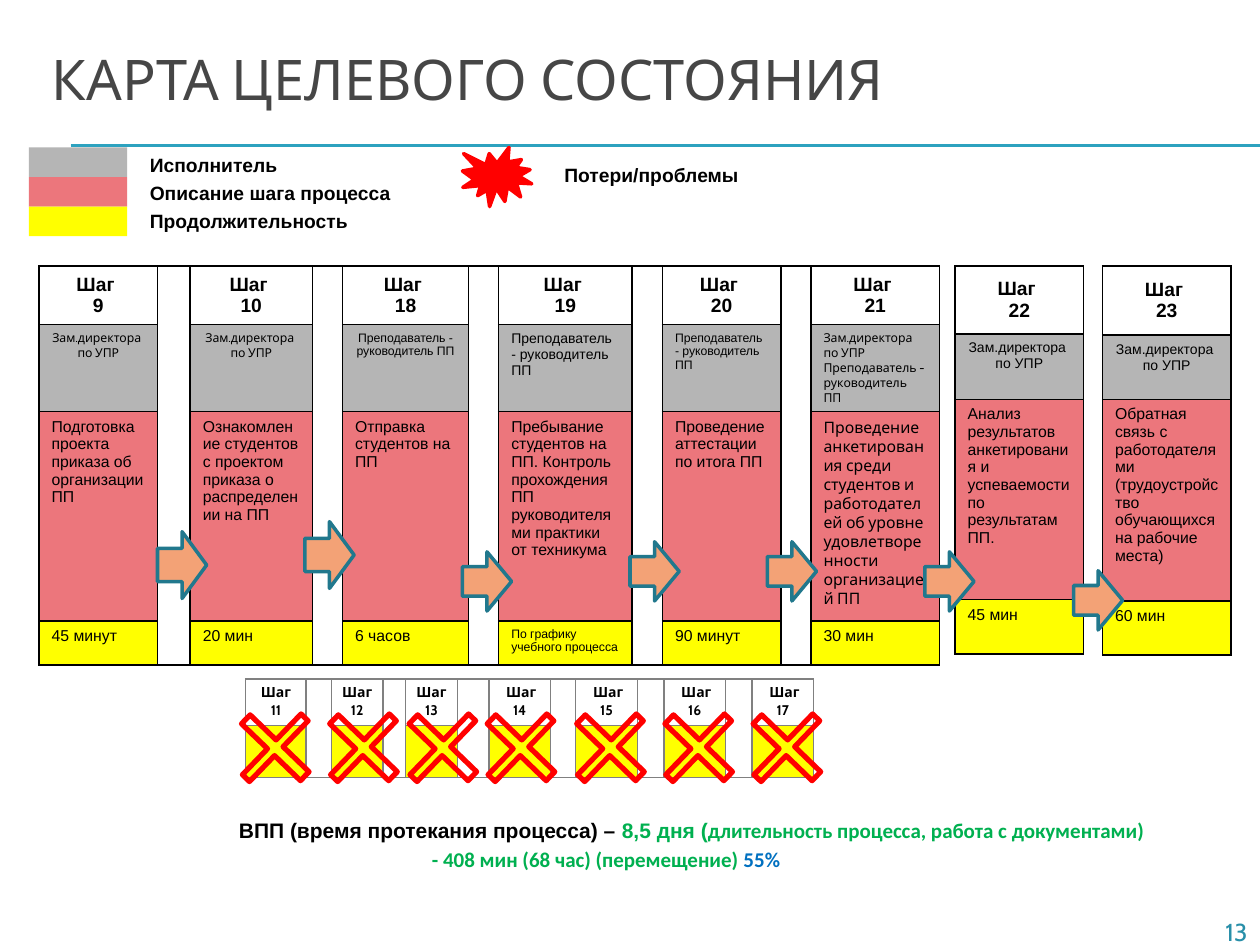
from dataclasses import dataclass

from lxml import etree
from pptx import Presentation
from pptx.dml.color import RGBColor
from pptx.enum.shapes import MSO_CONNECTOR, MSO_SHAPE
from pptx.enum.text import MSO_ANCHOR, PP_ALIGN
from pptx.oxml.ns import qn
from pptx.util import Inches, Pt

LEFT, CENTER, RIGHT = PP_ALIGN.LEFT, PP_ALIGN.CENTER, PP_ALIGN.RIGHT
TOP, MIDDLE = MSO_ANCHOR.TOP, MSO_ANCHOR.MIDDLE
RECTANGLE, ARROW = MSO_SHAPE.RECTANGLE, MSO_SHAPE.RIGHT_ARROW
BURST, CROSS = MSO_SHAPE.EXPLOSION1, MSO_SHAPE.CROSS
STRAIGHT = MSO_CONNECTOR.STRAIGHT


@dataclass(frozen=True)
class Theme:
    sans: str = "Arial"
    display: str = "Cabin"
    summary: str = "Calibri"
    black: str = "000000"
    white: str = "FFFFFF"
    title: str = "464646"
    number: str = "288FA9"
    rule: str = "2DA2BF"
    performer: str = "B5B5B5"
    action: str = "EC767C"
    duration: str = "FFFF00"
    loss: str = "FF0000"
    arrow: str = "F3A276"
    arrow_line: str = "21788D"
    removed_line: str = "808080"
    good: str = "00B050"
    share: str = "0070C0"
    title_size: float = 32
    number_size: float = 14
    summary_size: float = 12
    heading_size: float = 11
    body_size: float = 9
    note_size: float = 8
    small_size: float = 7


THEME = Theme()
STEP_FILLS = [THEME.white, THEME.performer, THEME.action, THEME.duration]


@dataclass(frozen=True)
class Entry:
    """Text of one table cell."""
    lines: tuple = ()
    size: float = THEME.body_size
    font: str = THEME.sans
    align: PP_ALIGN = LEFT
    bold: bool = False
    anchor: MSO_ANCHOR = TOP


@dataclass(frozen=True)
class Grid:
    """Place and measures of a table; odd columns are gaps when there are several."""
    left: float
    top: float
    columns: list
    rows: list
    fills: list
    line: str = THEME.black
    inset: tuple = (0.1, 0.05)


def rgb(value: str) -> RGBColor:
    return RGBColor.from_string(value)


def add_span(para, text: str, size: float, color: str, font: str = THEME.sans, bold: bool = False) -> None:
    span = para.add_run()
    span.text = text
    span.font.size, span.font.name, span.font.bold = Pt(size), font, bold
    span.font.color.rgb = rgb(color)


def add_paragraph(frame, first: bool):
    return frame.paragraphs[0] if first else frame.add_paragraph()


def add_text(page, left: float, top: float, width: float, height: float):
    box = page.shapes.add_textbox(Inches(left), Inches(top), Inches(width), Inches(height))
    box.text_frame.word_wrap = True
    return box.text_frame


def add_figure(page, kind, left: float, top: float, width: float, height: float,
               fill: str = "", line: str = "", weight: float = 2):
    figure = page.shapes.add_shape(kind, Inches(left), Inches(top), Inches(width), Inches(height))
    figure.shadow.inherit = False
    if fill:
        figure.fill.solid()
        figure.fill.fore_color.rgb = rgb(fill)
    else:
        figure.fill.background()
    if line:
        figure.line.color.rgb = rgb(line)
        figure.line.width = Pt(weight)
    else:
        figure.line.fill.background()
    return figure


def style_cell(cell, fill: str, line: str) -> None:
    properties = cell._tc.get_or_add_tcPr()
    for side in ("lnL", "lnR", "lnT", "lnB"):
        border = etree.SubElement(properties, qn(f"a:{side}"), w=str(Pt(1)))
        solid = etree.SubElement(border, qn("a:solidFill"))
        etree.SubElement(solid, qn("a:srgbClr"), val=line)
    cell.fill.solid()
    cell.fill.fore_color.rgb = rgb(fill)


def fill_cell(cell, entry: Entry) -> None:
    cell.vertical_anchor = entry.anchor
    for index, line in enumerate(entry.lines):
        para = add_paragraph(cell.text_frame, index == 0)
        para.alignment = entry.align
        add_span(para, line, entry.size, THEME.black, entry.font, entry.bold)
    if not entry.lines:
        # Small end mark keeps empty cells from stretching their row
        mark = etree.SubElement(cell.text_frame.paragraphs[0]._p, qn("a:endParaRPr"))
        mark.set("sz", str(int(THEME.small_size * 100)))


def draw_table(page, grid: Grid, steps: list) -> None:
    frame = page.shapes.add_table(
        len(grid.rows), len(grid.columns), Inches(grid.left), Inches(grid.top),
        Inches(sum(grid.columns)), Inches(sum(grid.rows)))
    table = frame.table
    table.first_row = table.horz_banding = False
    for column, width in zip(table.columns, grid.columns):
        column.width = Inches(width)
    for row, height in zip(table.rows, grid.rows):
        row.height = Inches(height)
    for x in range(len(grid.columns)):
        gap = x % 2 == 1
        if gap:
            table.cell(0, x).merge(table.cell(len(grid.rows) - 1, x))
        for y, fill in enumerate(grid.fills):
            cell = table.cell(y, x)
            cell.margin_left = cell.margin_right = Inches(grid.inset[0])
            cell.margin_top = cell.margin_bottom = Inches(grid.inset[1])
            style_cell(cell, THEME.white if gap else fill, grid.line)
            fill_cell(cell, Entry() if gap else steps[x // 2][y])


def make_step(number: int, performer: Entry, action: tuple, duration: str,
              action_font: str = THEME.sans, duration_size: float = THEME.body_size) -> list:
    heading = Entry(("Шаг ", str(number)), THEME.heading_size, align=CENTER, bold=True, anchor=MIDDLE)
    return [heading, performer, Entry(action, font=action_font), Entry((duration,), duration_size)]


DEPUTY = ("Зам.директора ", "по УПР")
TEACHER = ("Преподаватель - руководитель ПП",)
DEPUTY_SMALL = Entry(DEPUTY, THEME.small_size, THEME.display, CENTER)
DEPUTY_NOTE = Entry(DEPUTY, THEME.note_size, align=CENTER)
MAIN_STEPS = [
    make_step(9, DEPUTY_SMALL, ("Подготовка проекта приказа об организации ПП",), "45 минут"),
    make_step(10, DEPUTY_SMALL, ("Ознакомление студентов с проектом приказа о распределении на ПП",), "20 мин"),
    make_step(18, Entry(TEACHER, THEME.small_size, align=CENTER), ("Отправка студентов на ПП",), "6 часов"),
    make_step(19, Entry(TEACHER, THEME.note_size),
              ("Пребывание студентов на ПП. Контроль прохождения ПП руководителями практики от техникума",),
              "По графику учебного процесса", duration_size=THEME.small_size),
    make_step(20, Entry(TEACHER, THEME.small_size), ("Проведение аттестации по итога ПП",), "90 минут"),
    make_step(21, Entry(("Зам.директора", "по УПР") + TEACHER, THEME.small_size, THEME.display),
              ("Проведение анкетирования среди студентов и работодателей об уровне "
               "удовлетворенности организацией ПП",), "30 мин", THEME.display),
]
STEP_22 = make_step(22, DEPUTY_NOTE, ("Анализ результатов анкетирования и успеваемости по результатам ПП.",), "45 мин")
STEP_23 = make_step(23, DEPUTY_NOTE, ("Обратная связь с работодателями",
                                      "(трудоустройство обучающихся на рабочие места)"), "60 мин")
REMOVED_STEPS = [
    [Entry((label,), THEME.note_size, THEME.display, CENTER, True), Entry()]
    for label in ("Шаг 11", "Шаг 12", "Шаг 13", " Шаг 14", " Шаг 15", " Шаг 16", " Шаг 17")
]
ARROWS = [(1.25, 4.22, 0.53), (2.42, 4.14, 0.53), (3.67, 4.38, 0.47), (5, 4.3, 0.47),
          (6.09, 4.3, 0.47), (7.34, 4.38, 0.47), (8.52, 4.53, 0.47)]
CROSS_LEFTS = [1.86, 2.56, 3.19, 3.81, 4.52, 5.22, 5.92]


def draw_header(page) -> None:
    for y in (1.15, 1.16):
        rule = page.shapes.add_connector(STRAIGHT, Inches(0.56), Inches(y), Inches(10), Inches(y))
        rule.line.color.rgb, rule.line.width = rgb(THEME.rule), Pt(0.75)
        etree.SubElement(rule._element.spPr, qn("a:effectLst"))
    title = page.shapes.title
    title.left, title.top, title.width, title.height = map(Inches, (0.31, 0.16, 9.5, 0.92))
    title.text_frame.vertical_anchor = MIDDLE
    para = title.text_frame.paragraphs[0]
    para.alignment = LEFT
    add_span(para, "КАРТА ЦЕЛЕВОГО СОСТОЯНИЯ", THEME.title_size, THEME.title, THEME.display)
    para = add_text(page, 0.68, 7.23, 9.32, 0.27).paragraphs[0]
    para.alignment = RIGHT
    add_span(para, "13", THEME.number_size, THEME.number, THEME.display)


def draw_legend(page) -> None:
    labels = add_text(page, 1.09, 1.17, 3.28, 0.72)
    for index, text in enumerate(("Исполнитель", "Описание шага процесса", "Продолжительность")):
        add_figure(page, RECTANGLE, 0.23, 1.17 + index * 0.235, 0.78, 0.235, STEP_FILLS[index + 1])
        para = add_paragraph(labels, index == 0)
        para.space_after = Pt(2.7)
        add_span(para, text, THEME.heading_size, THEME.black, bold=True)
    para = add_text(page, 4.38, 1.25, 1.72, 0.29).paragraphs[0]
    add_span(para, "Потери/проблемы", THEME.heading_size, THEME.black, bold=True)
    add_figure(page, BURST, 3.67, 1.17, 0.55, 0.47, THEME.loss, THEME.loss)


def draw_summary(page) -> None:
    frame = add_text(page, 0.47, 6.41, 8.75, 0.57)
    rows = [
        [("ВПП (время протекания процесса) – ", THEME.black, THEME.sans), ("8,5 дня (", THEME.good, THEME.sans),
         ("длительность процесса, работа с документами) ", THEME.good, THEME.summary)],
        [("- 408 мин (68 час) (перемещение) ", THEME.good, THEME.summary), ("55%", THEME.share, THEME.summary)],
    ]
    for index, spans in enumerate(rows):
        para = add_paragraph(frame, index == 0)
        para.line_spacing = 1.15
        para.alignment = LEFT if index else RIGHT
        for text, color, font in spans:
            add_span(para, text, THEME.summary_size, color, font, True)
    para._p.get_or_add_pPr().set("marL", str(Inches(2.86)))


def main() -> None:
    deck = Presentation()
    deck.slide_width, deck.slide_height = Inches(10), Inches(7.5)
    page = deck.slides.add_slide(deck.slide_layouts[5])
    draw_header(page)
    draw_legend(page)
    # Steps that stay, then the arrows between them
    draw_table(page, Grid(0.31, 2.11, [0.94, 0.26, 0.97, 0.23, 1, 0.23, 1.06, 0.24, 0.94, 0.23, 1.02],
                          [0.43, 0.69, 1.66, 0.35], STEP_FILLS), MAIN_STEPS)
    draw_table(page, Grid(7.58, 2.11, [1.02], [0.54, 0.52, 1.59, 0.43], STEP_FILLS), [STEP_22])
    draw_table(page, Grid(8.75, 2.11, [1.02], [0.55, 0.51, 1.6, 0.43], STEP_FILLS), [STEP_23])
    for left, top, height in ARROWS:
        add_figure(page, ARROW, left, top, 0.39, height, THEME.arrow, THEME.arrow_line)
    # Removed steps, crossed out
    draw_table(page, Grid(1.95, 5.39, [0.48, 0.2, 0.41, 0.18, 0.41, 0.25] + [0.49, 0.2] + [0.49, 0.21] * 2 + [0.49],
                          [0.37, 0.41], [THEME.white, THEME.duration], THEME.removed_line, (0.07, 0.04)),
               REMOVED_STEPS)
    for left in CROSS_LEFTS:
        cross = add_figure(page, CROSS, left, 5.6, 0.65, 0.67, line=THEME.loss, weight=3)
        cross.rotation, cross.adjustments[0] = 44, 0.44
    draw_summary(page)
    deck.save("out.pptx")


if __name__ == "__main__":
    main()
